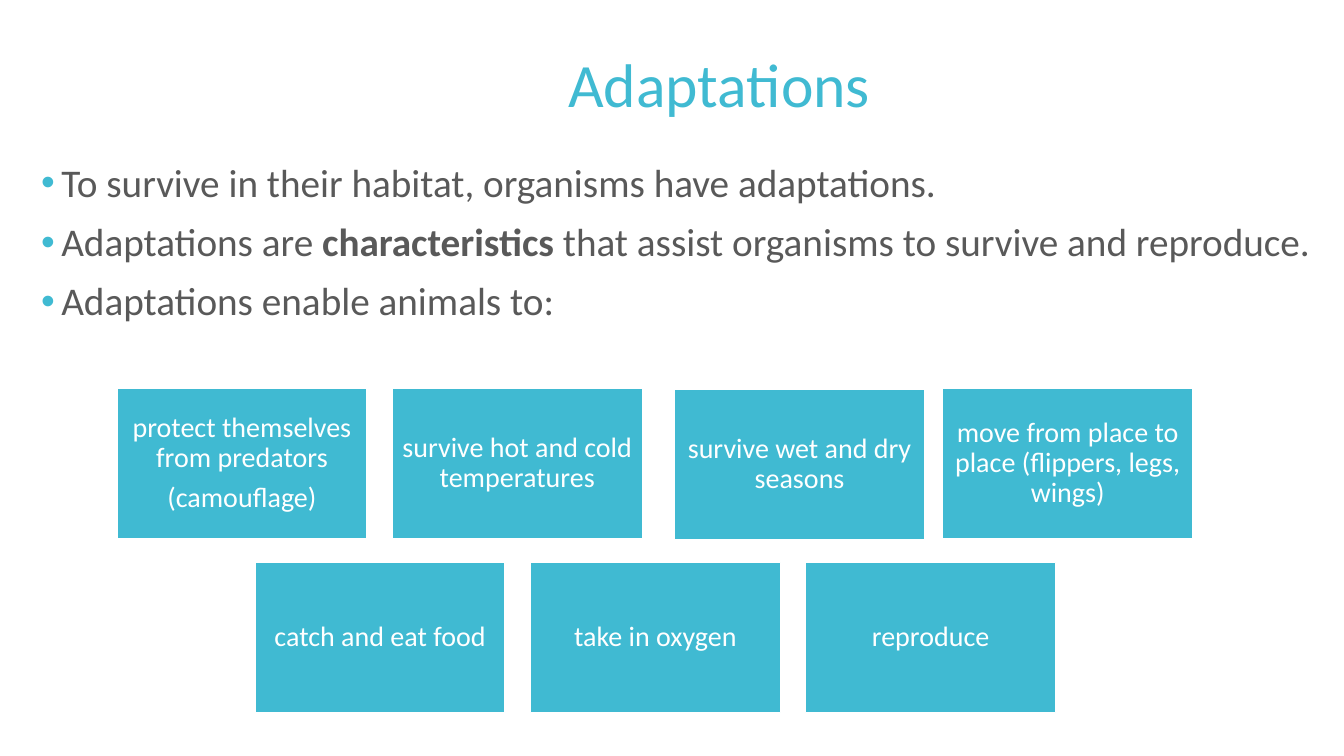
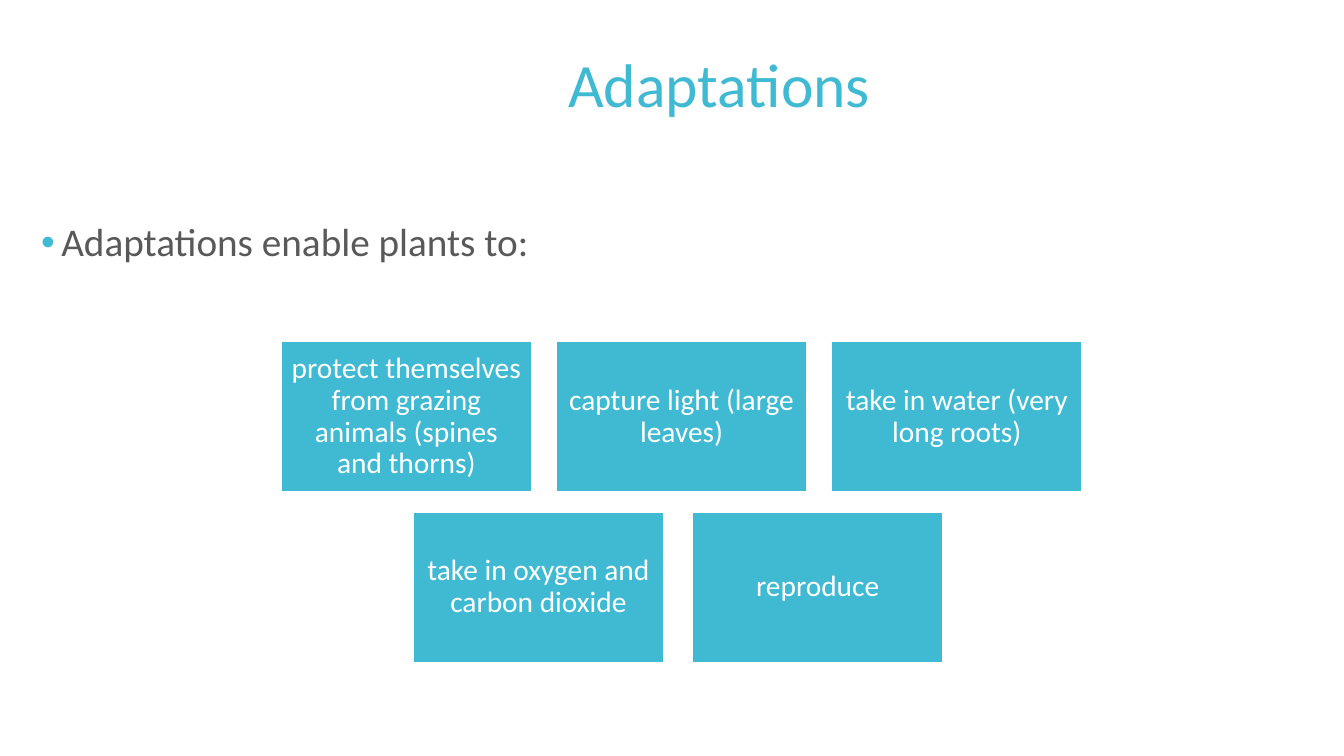
from dataclasses import dataclass

from lxml import etree
from pptx import Presentation
from pptx import util as u
from pptx.dml.color import RGBColor
from pptx.enum import shapes, text
from pptx.oxml.ns import qn


@dataclass(frozen=True)
class Theme:
    font: str = "Calibri"
    accent: str = "40BAD2"
    body: str = "595959"
    white: str = "FFFFFF"
    title_size: int = 44
    body_size: int = 28
    tile_w: float = 2.48
    tile_h: float = 1.49
    pitch: float = 2.73


T = Theme()
TITLE_BOX = (4.1, 0.41, 6.07, 0.84)
BODY_BOX = (0.31, 1.56, 13.12, 1.72)


def rgb(value):
    return RGBColor.from_string(value)


def inches(box):
    return [u.Inches(v) for v in box]


def add_run(p, words, size, color, bold=False):
    r = p.add_run()
    r.text = words
    r.font.name = T.font
    r.font.size = u.Pt(size)
    r.font.color.rgb = rgb(color)
    r.font.bold = bold


def paragraphs(tf, items):
    for i, item in enumerate(items):
        yield i, tf.paragraphs[0] if i == 0 else tf.add_paragraph(), item


def add_bullet(p):
    pPr = p._p.get_or_add_pPr()
    pPr.set("marL", str(u.Inches(0.2)))
    pPr.set("indent", str(-u.Inches(0.2)))
    clr = etree.SubElement(pPr, qn("a:buClr"))
    etree.SubElement(clr, qn("a:srgbClr"), val=T.accent)
    etree.SubElement(pPr, qn("a:buFont"), typeface="Arial")
    etree.SubElement(pPr, qn("a:buChar"), char="•")


def add_title(s, words, box=TITLE_BOX):
    tf = s.shapes.add_textbox(*inches(box)).text_frame
    tf.word_wrap = True
    p = tf.paragraphs[0]
    p.alignment = text.PP_ALIGN.CENTER
    add_run(p, words, T.title_size, T.accent)


def add_bullets(s, items, box=BODY_BOX):
    tf = s.shapes.add_textbox(*inches(box)).text_frame
    tf.word_wrap = True
    tf.vertical_anchor = text.MSO_ANCHOR.MIDDLE
    for _, p, runs in paragraphs(tf, items):
        p.line_spacing = 0.9
        p.space_before = u.Pt(12)
        add_bullet(p)
        for words, bold in runs:
            add_run(p, words, T.body_size, T.body, bold)


def add_tile(s, left, top, lines, size):
    sp = s.shapes.add_shape(shapes.MSO_SHAPE.RECTANGLE,
                            *inches((left, top, T.tile_w, T.tile_h)))
    sp.shadow.inherit = False
    sp.fill.solid()
    sp.fill.fore_color.rgb = rgb(T.accent)
    sp.line.color.rgb = rgb(T.white)
    sp.line.width = u.Pt(0.85)
    tf = sp.text_frame
    tf.word_wrap = True
    tf.vertical_anchor = text.MSO_ANCHOR.MIDDLE
    inset = u.Inches(0.08 if size == 20 else 0.09)
    tf.margin_left = tf.margin_right = tf.margin_top = tf.margin_bottom = inset
    for i, p, words in paragraphs(tf, lines):
        p.alignment = text.PP_ALIGN.CENTER
        p.line_spacing = 0.9
        p.space_before = u.Pt(0.35 * size if i else 0)
        add_run(p, words, size, T.white)


def add_tile_row(s, left, top, tiles, size, pitch=T.pitch, nudges=None):
    for i, lines in enumerate(tiles):
        dx, dy = (nudges or {}).get(i, (0, 0))
        add_tile(s, left + i * pitch + dx, top + dy, lines, size)


def add_adaptations_slide(prs, bullets, size, rows):
    s = prs.slides.add_slide(prs.slide_layouts[6])
    add_bullets(s, bullets)
    for row in rows:
        add_tile_row(s, size=size, **row)
    add_title(s, "Adaptations")


def main():
    prs = Presentation()
    prs.slide_width, prs.slide_height = inches((13.33, 7.5))
    add_adaptations_slide(
        prs,
        [[("To survive in their habitat, organisms have adaptations.", False)],
         [("Adaptations are ", False), ("characteristics", True),
          (" that assist organisms to survive and reproduce.", False)],
         [("Adaptations enable animals to:", False)]],
        20,
        [dict(left=1.16, top=3.85, nudges={2: (0.07, 0.01)}, tiles=[
            ["protect themselves from predators", "(camouflage)"],
            ["survive hot and cold temperatures"],
            ["survive wet and dry seasons"],
            ["move from place to place (flippers, legs, wings)"]]),
         dict(left=2.53, top=5.58, tiles=[
             ["catch and eat food"], ["take in oxygen"], ["reproduce"]])])
    add_adaptations_slide(
        prs,
        [[("Adaptations enable plants to:", False)]],
        21,
        [dict(left=2.79, top=3.39, tiles=[
            ["protect themselves from grazing animals (spines and thorns)"],
            ["capture light (large leaves)"],
            ["take in water (very long roots)"]]),
         dict(left=4.1, top=5.08, pitch=2.77, tiles=[
             ["take in oxygen and carbon dioxide"], ["reproduce"]])])
    prs.save("out.pptx")


if __name__ == "__main__":
    main()
